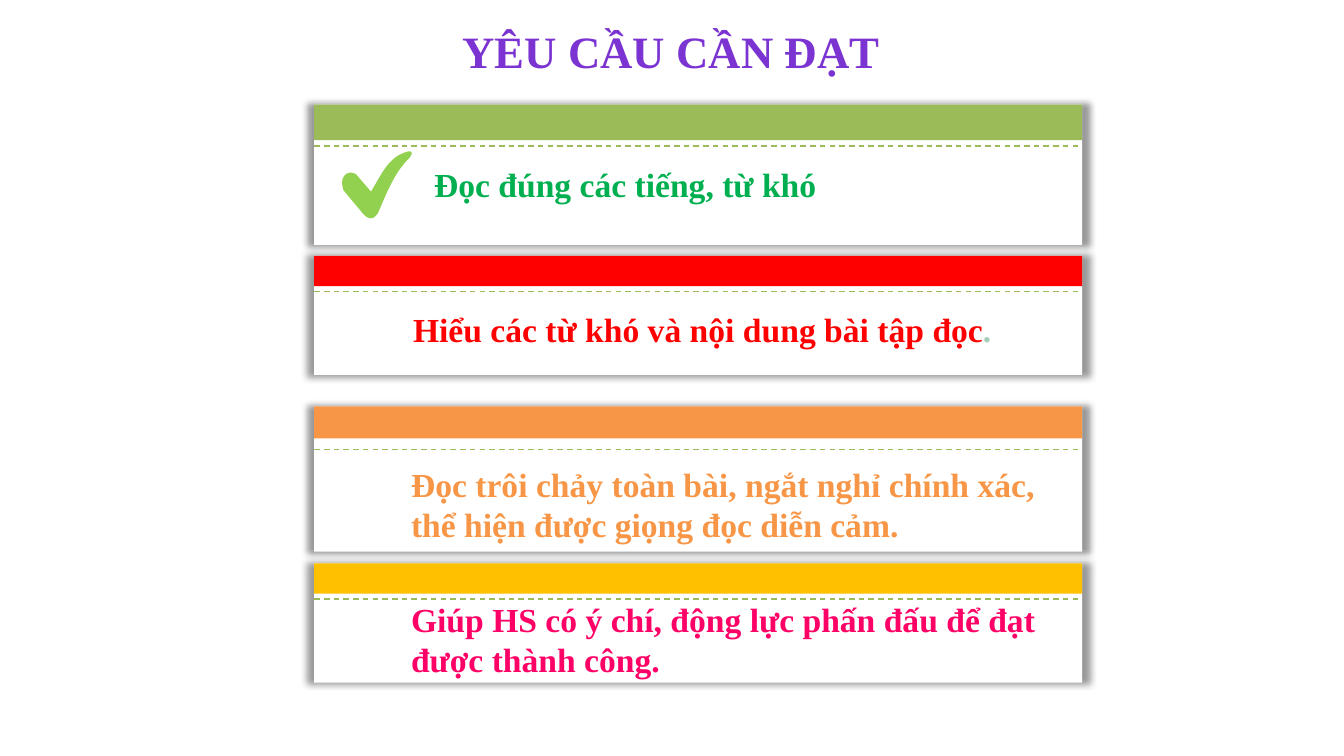
from lxml import etree
from pptx import Presentation
from pptx.dml.color import RGBColor
from pptx.enum import dml, shapes, text
from pptx.oxml import parse_xml
from pptx.oxml.ns import nsdecls, qn
from pptx.util import Cm, Pt

WHITE = RGBColor(0xFF, 0xFF, 0xFF)
PURPLE = RGBColor(0x7B, 0x34, 0xD2)
OLIVE = RGBColor(0x9B, 0xBB, 0x59)
RED = RGBColor(0xFF, 0x00, 0x00)
ORANGE = RGBColor(0xF7, 0x96, 0x46)
GOLD = RGBColor(0xFF, 0xC0, 0x00)
GREEN = RGBColor(0x00, 0xB0, 0x50)
PINK = RGBColor(0xFF, 0x00, 0x66)
PALE_GREEN = RGBColor(0xA3, 0xCE, 0xB8)
TICK_GREEN = RGBColor(0x92, 0xD0, 0x50)

CARD_LEFT, CARD_WIDTH = 7.92, 19.35
SOFT_SHADOW = (
    f'<a:effectLst {nsdecls("a")}><a:outerShdw blurRad="63500" sx="102000" sy="102000" '
    'algn="ctr" rotWithShape="0"><a:srgbClr val="000000"><a:alpha val="40000"/>'
    '</a:srgbClr></a:outerShdw></a:effectLst>')

presentation = Presentation()
presentation.slide_width, presentation.slide_height = Cm(33.87), Cm(19.05)
slide = presentation.slides.add_slide(presentation.slide_layouts[6])


def add_text(runs, left, top, width, height, size=24, align=text.PP_ALIGN.LEFT,
             anchor=text.MSO_ANCHOR.TOP):
    """Add a wrapped text box from (wording, colour) runs; lengths are in cm."""
    box = slide.shapes.add_textbox(Cm(left), Cm(top), Cm(width), Cm(height))
    frame = box.text_frame
    frame.word_wrap = True
    frame.vertical_anchor = anchor
    paragraph = frame.paragraphs[0]
    paragraph.alignment = align
    for wording, color in runs:
        run = paragraph.add_run()
        run.text = wording
        run.font.name = "Times New Roman"
        run.font.size = Pt(size)
        run.font.bold = True
        run.font.color.rgb = color


def add_bar(group, top, height, color):
    bar = group.shapes.add_shape(shapes.MSO_SHAPE.RECTANGLE, Cm(CARD_LEFT), Cm(top),
                                 Cm(CARD_WIDTH), Cm(height))
    bar.shadow.inherit = False
    bar.fill.solid()
    bar.fill.fore_color.rgb = color
    bar.line.fill.background()
    return bar


add_text([("YÊU CẦU CẦN ĐẠT", PURPLE)], 9.78, 0.23, 14.27, 2.08, size=32,
         align=text.PP_ALIGN.CENTER, anchor=text.MSO_ANCHOR.MIDDLE)

# top, height, band height, band colour, dashed line y, text box, runs
cards = [
    (2.64, 3.53, 0.89, OLIVE, 3.68, (10.69, 4.01, 15.72, 1.27),
     [("Đọc đúng các tiếng, từ khó", GREEN)]),
    (6.45, 3.0, 0.76, RED, 7.34, (10.16, 7.67, 15.88, 1.27),
     [("Hiểu các từ khó và nội dung bài tập đọc", RED), (".", PALE_GREEN)]),
    (10.24, 3.66, 0.81, ORANGE, 11.33, (10.11, 11.56, 16.89, 2.31),
     [("Đọc trôi chảy toàn bài, ngắt nghỉ chính xác, thể hiện được giọng đọc diễn cảm.",
       ORANGE)]),
    (14.2, 3.0, 0.76, GOLD, 15.21 - 0.12, (10.11, 14.96, 17.45, 2.31),
     [("Giúp HS có ý chí, động lực phấn đấu để đạt được thành công.", PINK)]),
]
for top, height, band_height, color, line_y, text_box, runs in cards:
    card = slide.shapes.add_group_shape()
    panel = add_bar(card, top, height, WHITE)
    properties = panel._element.spPr
    properties.replace(properties.find(qn("a:effectLst")), parse_xml(SOFT_SHADOW))
    add_bar(card, top, band_height, color)
    divider = card.shapes.add_connector(
        shapes.MSO_CONNECTOR.STRAIGHT, Cm(CARD_LEFT), Cm(line_y),
        Cm(CARD_LEFT + CARD_WIDTH), Cm(line_y))
    divider.line.color.rgb = OLIVE
    divider.line.width = Pt(1)
    divider.line.dash_style = dml.MSO_LINE.DASH
    etree.SubElement(divider._element.spPr, qn("a:effectLst"))
    add_text(runs, *text_box)

# Each tick segment is one end point, or two Bézier handles and an end point
tick_start = (9.35, 4.83)
tick_segments = [
    [(8.97, 4.39)],
    [(8.76, 4.27), (8.53, 4.45), (8.66, 4.8)],
    [(9.17, 5.41)],
    [(9.3, 5.54), (9.42, 5.54), (9.53, 5.36)],
    [(9.73, 4.9), (9.91, 4.42), (10.24, 4.06)],
    [(10.41, 3.91), (10.46, 3.73), (10.16, 3.86)],
    [(9.75, 4.01), (9.55, 4.52), tick_start],
]
STEPS = 12
outline = [tick_start]
for segment in tick_segments:
    if len(segment) == 1:
        outline += segment
        continue
    controls = [outline[-1], *segment]
    for step in range(1, STEPS + 1):
        t = step / STEPS
        weights = ((1 - t) ** 3, 3 * t * (1 - t) ** 2, 3 * t ** 2 * (1 - t), t ** 3)
        outline.append(tuple(sum(weight * point[axis] for weight, point
                                 in zip(weights, controls)) for axis in (0, 1)))
points = [(Cm(x), Cm(y)) for x, y in outline]
builder = slide.shapes.build_freeform(*points[0])
builder.add_line_segments(points[1:], close=True)
tick = builder.convert_to_shape()
tick.shadow.inherit = False
tick.fill.solid()
tick.fill.fore_color.rgb = TICK_GREEN
tick.line.fill.background()

presentation.save("out.pptx")
